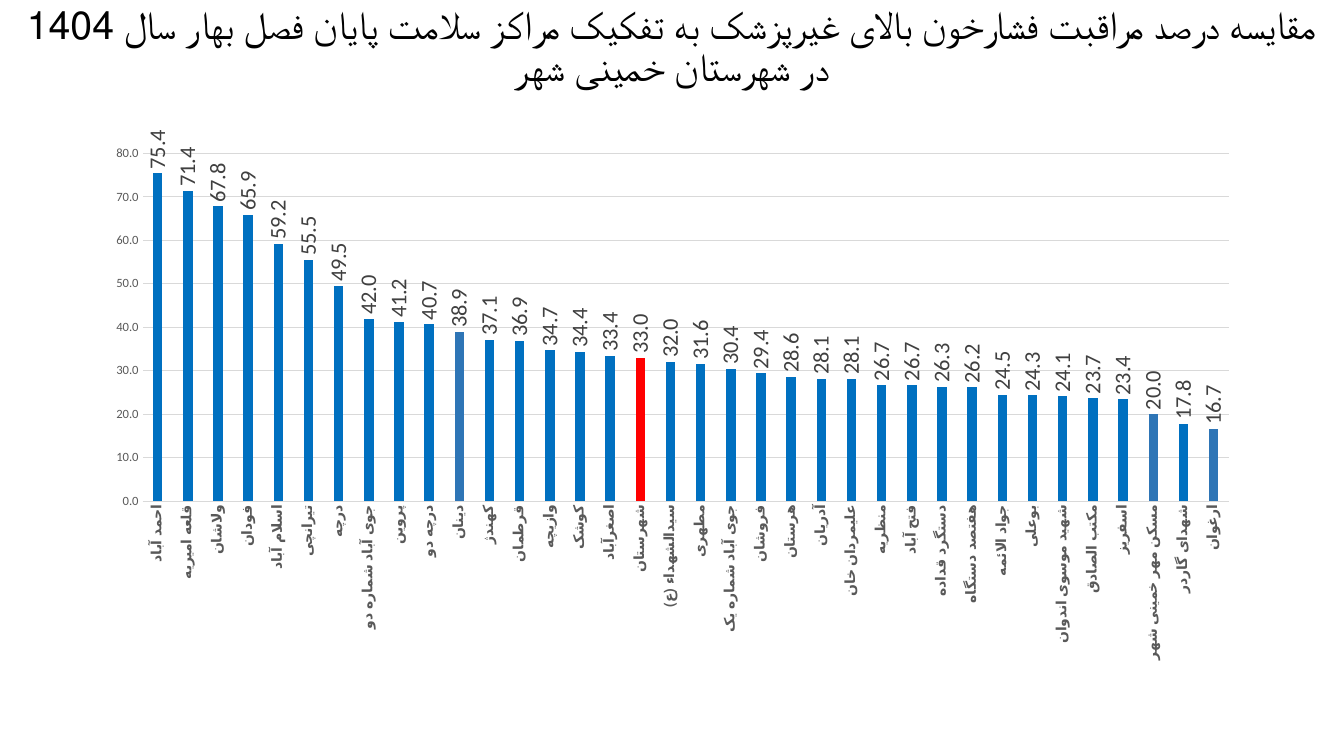
from dataclasses import dataclass

from pptx import Presentation
from pptx.chart.chart import Chart
from pptx.chart.data import CategoryChartData
from pptx.dml.color import RGBColor
from pptx.enum.chart import XL_CHART_TYPE, XL_LABEL_POSITION, XL_TICK_MARK
from pptx.enum.text import MSO_ANCHOR, PP_ALIGN
from pptx.oxml import parse_xml
from pptx.oxml.ns import nsdecls, qn
from pptx.slide import Slide
from pptx.text.text import Font
from pptx.util import Pt


@dataclass(frozen=True)
class Theme:
    font: str = "Calibri"
    ink: str = "000000"
    label: str = "404040"
    axis: str = "595959"
    grid: str = "D9D9D9"
    bar: str = "0070C0"
    soft_bar: str = "2E75B6"
    county_bar: str = "FF0000"
    title_size: float = 28
    label_size: float = 16
    category_size: float = 10
    value_size: float = 9
    line_width: float = 0.75


@dataclass(frozen=True)
class Center:
    name: str
    percent: float
    color: str


@dataclass(frozen=True)
class Frame:
    left: float
    top: float
    width: float
    height: float

    def lengths(self) -> tuple[Pt, Pt, Pt, Pt]:
        return Pt(self.left), Pt(self.top), Pt(self.width), Pt(self.height)


THEME = Theme()
TITLE = ("مقایسه درصد مراقبت فشارخون بالای غیرپزشک به تفکیک مراکز سلامت پایان "
         "فصل بهار سال 1404 در شهرستان خمینی شهر")
TITLE_FRAME = Frame(5, 0, 950, 68.4)
CHART_FRAME = Frame(66.24, 92.88, 828, 393.84)
PLOT_FRACTIONS = {"x": 0.043, "y": 0.042, "w": 0.937, "h": 0.631}
SPECIAL_BARS = {
    "شهرستان": THEME.county_bar,
    "دینان": THEME.soft_bar,
    "مسکن مهر خمینی شهر": THEME.soft_bar,
    "ارغوان": THEME.soft_bar,
}
PERCENTS = {
    "احمد آباد": 75.4, "قلعه امیریه": 71.4, "ولاشان": 67.8, "فودان": 65.9,
    "اسلام آباد": 59.2, "تیرانچی": 55.5, "درچه": 49.5, "جوی آباد شماره دو": 42,
    "پروین": 41.2, "درچه دو": 40.7, "دینان": 38.9, "کهندژ": 37.1,
    "قرطمان": 36.9, "وازیچه": 34.7, "کوشک": 34.4, "اصغرآباد": 33.4,
    "شهرستان": 33, "سیدالشهداء (ع)": 32, "مطهری": 31.6, "جوی آباد شماره یک": 30.4,
    "فروشان": 29.4, "هرستان": 28.6, "آدریان": 28.1, "علیمردان خان": 28.1,
    "منظریه": 26.7, "فتح آباد": 26.7, "دستگرد قداده": 26.3, "هفتصد دستگاه": 26.2,
    "جواد الائمه": 24.5, "بوعلی": 24.3, "شهید موسوی اندوان": 24.1, "مکتب الصادق": 23.7,
    "اسفریز": 23.4, "مسکن مهر خمینی شهر": 20, "شهدای گاردر": 17.8, "ارغوان": 16.7,
}
CENTERS = [Center(name, percent, SPECIAL_BARS.get(name, THEME.bar))
           for name, percent in PERCENTS.items()]


def style_font(font: Font, size: float, color: str, bold: bool = False) -> None:
    font.name = THEME.font
    font.size = Pt(size)
    font.bold = bold
    font.color.rgb = RGBColor.from_string(color)


def turn_upright(owner) -> None:
    body = owner._element.find(qn("c:txPr")).find(qn("a:bodyPr"))
    body.set("rot", "-5400000")
    body.set("vert", "horz")


def add_title(page: Slide) -> None:
    box = page.shapes.add_textbox(*TITLE_FRAME.lengths())
    box.text_frame.word_wrap = True
    box.text_frame.vertical_anchor = MSO_ANCHOR.MIDDLE
    para = box.text_frame.paragraphs[0]
    para.alignment = PP_ALIGN.CENTER
    para.line_spacing = 0.9
    para._p.get_or_add_pPr().set("rtl", "1")
    span = para.add_run()
    span.text = TITLE
    style_font(span.font, THEME.title_size, THEME.ink)


def place_plot(chart: Chart) -> None:
    plot_area = chart._chartSpace.chart.plotArea
    for layout in plot_area.findall(qn("c:layout")):
        plot_area.remove(layout)
    modes = "".join(f'<c:{key}Mode val="edge"/>' for key in "xy")
    places = "".join(f'<c:{key} val="{part}"/>' for key, part in PLOT_FRACTIONS.items())
    plot_area.insert(0, parse_xml(
        f'<c:layout {nsdecls("c")}><c:manualLayout><c:layoutTarget val="inner"/>'
        f'{modes}{places}</c:manualLayout></c:layout>'))


def style_axes(chart: Chart) -> None:
    categories, values = chart.category_axis, chart.value_axis
    for axis in (categories, values):
        axis.major_tick_mark = axis.minor_tick_mark = XL_TICK_MARK.NONE
    style_font(categories.tick_labels.font, THEME.category_size, THEME.axis, bold=True)
    turn_upright(categories)
    style_font(values.tick_labels.font, THEME.value_size, THEME.axis)
    values.minimum_scale, values.maximum_scale, values.major_unit = 0, 80, 10
    values.tick_labels.number_format = "0.0"
    values.tick_labels.number_format_is_linked = False
    values.format.line.fill.background()
    for line in (categories.format.line, values.major_gridlines.format.line):
        line.width = Pt(THEME.line_width)
        line.color.rgb = RGBColor.from_string(THEME.grid)


def style_bars(chart: Chart) -> None:
    plot = chart.plots[0]
    plot.gap_width, plot.overlap = 219, -27
    plot.vary_by_categories = False
    series = plot.series[0]
    series.format.fill.solid()
    series.format.fill.fore_color.rgb = RGBColor.from_string(THEME.bar)
    for index, center in enumerate(CENTERS):
        if center.color != THEME.bar:
            fill = series.points[index].format.fill
            fill.solid()
            fill.fore_color.rgb = RGBColor.from_string(center.color)
    labels = series.data_labels
    labels.show_value = True
    labels.position = XL_LABEL_POSITION.OUTSIDE_END
    labels.number_format = "0.0"
    labels.number_format_is_linked = False
    style_font(labels.font, THEME.label_size, THEME.label)
    turn_upright(labels)


def add_percent_chart(page: Slide) -> None:
    data = CategoryChartData(number_format="0.0")
    data.categories = [center.name for center in CENTERS]
    data.add_series("Series 1", [center.percent for center in CENTERS])
    chart = page.shapes.add_chart(
        XL_CHART_TYPE.COLUMN_CLUSTERED, *CHART_FRAME.lengths(), data).chart
    chart.has_title = False
    chart.has_legend = False
    style_font(chart.font, THEME.category_size, THEME.ink)
    place_plot(chart)
    style_axes(chart)
    style_bars(chart)


def main() -> None:
    """Build the slide comparing blood pressure care across health centres."""
    deck = Presentation()
    deck.slide_width, deck.slide_height = Pt(960), Pt(540)
    page = deck.slides.add_slide(deck.slide_layouts[6])
    add_title(page)
    add_percent_chart(page)
    deck.save("out.pptx")


if __name__ == "__main__":
    main()
